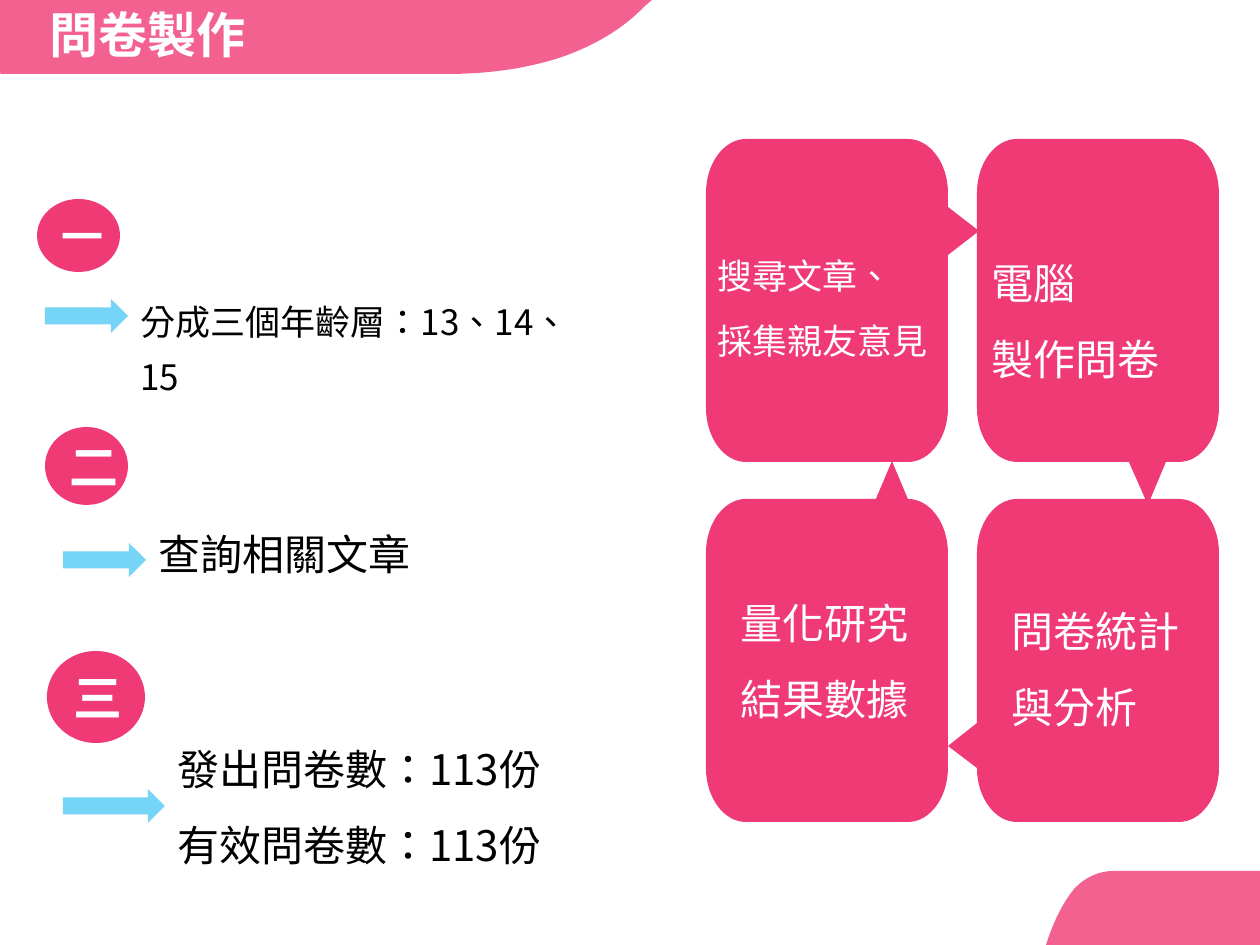
"""Build the questionnaire production slide: three steps and a four-part cycle."""
from lxml.etree import SubElement
from pptx import Presentation
from pptx.dml.color import RGBColor
from pptx.enum.shapes import MSO_SHAPE
from pptx.enum.text import MSO_ANCHOR, MSO_AUTO_SIZE, PP_ALIGN
from pptx.oxml.ns import qn
from pptx.util import Pt

PX = 914400 / 126
FONT = "Noto Sans CJK SC"
COLORS = {"pink": "EF3A75", "blue": "76D4F6", "white": "FFFFFF", "black": "000000"}


def draw_outline(shapes, start, segments):
    """Draw a closed pink outline from line (x, y) and cubic curve (6 number) segments."""
    points = [(round(segment[i] * PX), round(segment[i + 1] * PX))
              for segment in segments for i in range(0, len(segment), 2)]
    builder = shapes.build_freeform(round(start[0] * PX), round(start[1] * PX))
    builder.add_line_segments(points, close=True)
    shape = builder.convert_to_shape()
    lines = iter(list(shape.element.iter(qn("a:lnTo"))))
    for segment in segments:
        line = next(lines)
        if len(segment) == 6:
            line.tag = qn("a:cubicBezTo")
            for extra in (next(lines), next(lines)):
                line.append(extra[0])
                extra.getparent().remove(extra)
    shape.shadow.inherit = False
    shape.fill.solid()
    shape.fill.fore_color.rgb = RGBColor.from_string(COLORS["pink"])
    shape.line.fill.background()
    return shape


def write_text(shape, text, size, color, bold=False, align=PP_ALIGN.LEFT,
               line_spacing=1.0, space_before=0):
    """Fill a shape with text and format every paragraph and run."""
    frame = shape.text_frame
    frame.text = text
    frame.word_wrap = True
    for paragraph in frame.paragraphs:
        paragraph.alignment = align
        paragraph.line_spacing = line_spacing
        paragraph.space_before = Pt(space_before)
        for run in paragraph.runs:
            run.font.size = Pt(size)
            run.font.bold = bold
            run.font.color.rgb = RGBColor.from_string(COLORS[color])
            run.font.name = FONT
            properties = run.font._element
            properties.set("lang", "zh-TW")
            properties.set("altLang", "en-US")
            SubElement(properties, qn("a:ea")).set("typeface", FONT)


presentation = Presentation()
presentation.slide_width = round(1260 * PX)
presentation.slide_height = round(945 * PX)
slide = presentation.slides.add_slide(presentation.slide_layouts[5])
shapes = slide.shapes

banner = draw_outline(shapes, (0, 0), [
    (652, 0), (645, 6), (624, 28, 596, 45, 562, 57), (529, 68, 490, 74, 447, 74),
    (6, 74), (4, 74, 3, 74, 1, 74), (0, 73)])
corner = draw_outline(shapes, (1260, 945), [
    (1046, 945), (1048, 939), (1056, 916, 1065, 900, 1075, 888),
    (1086, 877, 1099, 871, 1114, 871), (1257, 871),
    (1258, 871, 1259, 871, 1260, 871), (1260, 872)])
for shape in (banner, corner):
    color = shape.element.find(".//" + qn("a:srgbClr"))
    SubElement(color, qn("a:alpha")).set("val", "80000")

title = shapes.title
title.left, title.top, title.width, title.height = (
    round(value * PX) for value in (37, 5, 222, 64))
write_text(title, "問卷製作", 28, "white", bold=True, line_spacing=0.9, space_before=10)
title.text_frame.vertical_anchor = MSO_ANCHOR.TOP
title.text_frame.auto_size = MSO_AUTO_SIZE.NONE
shapes.element.append(title.element)

BUBBLE_WIDTH, BUBBLE_HEIGHT = 242, 323
RADIUS_X, RADIUS_Y = 40, 54
KAPPA = 0.55
bubbles = [
    (706, 139, "right", [(948, 207), (979, 231), (948, 255)]),
    (977, 139, "bottom", [(1166, 462), (1148, 505), (1129, 462)]),
    (706, 499, "top", [(876, 499), (892, 461), (908, 499)]),
    (977, 499, "left", [(977, 768), (948, 746), (977, 723)]),
]
handle_x, handle_y = RADIUS_X * (1 - KAPPA), RADIUS_Y * (1 - KAPPA)
for left, top, tail_side, tail in bubbles:
    right, bottom = left + BUBBLE_WIDTH, top + BUBBLE_HEIGHT
    sides = [
        ("top", (right - RADIUS_X, top),
         (right - handle_x, top, right, top + handle_y, right, top + RADIUS_Y)),
        ("right", (right, bottom - RADIUS_Y),
         (right, bottom - handle_y, right - handle_x, bottom, right - RADIUS_X, bottom)),
        ("bottom", (left + RADIUS_X, bottom),
         (left + handle_x, bottom, left, bottom - handle_y, left, bottom - RADIUS_Y)),
        ("left", (left, top + RADIUS_Y),
         (left, top + handle_y, left + handle_x, top, left + RADIUS_X, top)),
    ]
    segments = []
    for side, side_end, rounded_corner in sides:
        if side == tail_side:
            segments += tail
        segments += [side_end, rounded_corner]
    draw_outline(shapes, (left + RADIUS_X, top), segments)

badges = [
    ("一", 24, (37, 199, 83, 73)),
    ("二", 28, (45, 427, 83, 78)),
    ("三", 28, (47, 651, 98, 92)),
]
arrows = [(45, 299, 83, 34), (63, 543, 83, 34), (63, 789, 102, 34)]
presets = [(MSO_SHAPE.OVAL, box, "pink", label, size) for label, size, box in badges]
presets += [(MSO_SHAPE.RIGHT_ARROW, box, "blue", "", 0) for box in arrows]
for preset, box, color, label, size in presets:
    shape = shapes.add_shape(preset, *(round(value * PX) for value in box))
    shape.shadow.inherit = False
    shape.fill.solid()
    shape.fill.fore_color.rgb = RGBColor.from_string(COLORS[color])
    shape.line.fill.background()
    if label:
        write_text(shape, label, size, "white", bold=True, align=PP_ALIGN.CENTER)
        shape.text_frame.vertical_anchor = MSO_ANCHOR.MIDDLE

texts = [
    ("分成三個年齡層：13、14、15", 20, "black", (128, 282, 485, 63)),
    ("查詢相關文章", 24, "black", (146, 507, 348, 73)),
    ("發出問卷數：113份\n有效問卷數：113份", 24, "black", (165, 722, 425, 149)),
    ("搜尋文章、\n採集親友意見", 20, "white", (705, 236, 243, 129)),
    ("電腦\n製作問卷", 24, "white", (979, 236, 281, 149)),
    ("問卷統計\n與分析", 24, "white", (999, 584, 200, 149)),
    ("量化研究\n結果數據", 24, "white", (728, 576, 200, 149)),
]
for text, size, color, box in texts:
    text_box = shapes.add_textbox(*(round(value * PX) for value in box))
    write_text(text_box, text, size, color, line_spacing=1.3, space_before=6)
    text_box.text_frame.auto_size = MSO_AUTO_SIZE.SHAPE_TO_FIT_TEXT

presentation.save("out.pptx")
